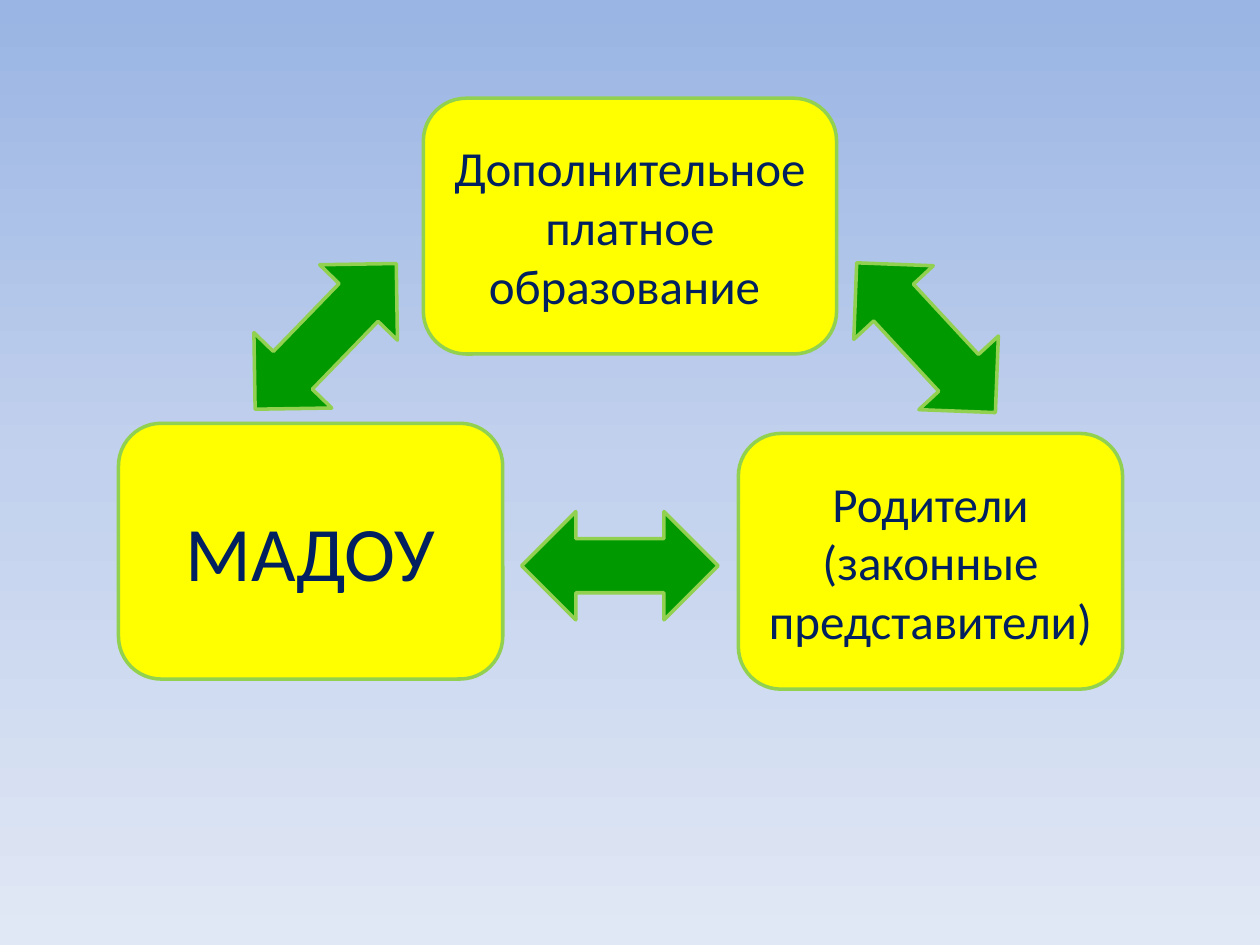
from copy import deepcopy

from pptx import Presentation
from pptx.dml.color import RGBColor
from pptx.enum.shapes import MSO_SHAPE as Kind
from pptx.enum.text import MSO_ANCHOR, PP_ALIGN
from pptx.oxml.ns import qn
from pptx.util import Inches, Pt

SKY = [(0, "9AB5E4"), (0.5, "C2D1ED"), (1, "E1E8F5")]
YELLOW, GREEN, LIME, NAVY = "FFFF00", "009900", "92D050", "002060"

# text, size, left, top, width
BOX_H = 2.03
BOXES = [
    ("Дополнительное платное образование ", 28, 3.36, 0.78, 3.28),
    ("Родители (законные представители)", 28, 5.86, 3.44, 3.05),
    ("МАДОУ", 44, 0.94, 3.36, 3.05),
]
# left, top, width, rotation
ARROW_H = 0.86
ARROWS = [
    (4.14, 4.06, 1.56, 0),
    (1.78, 2.24, 1.61, 314.1),
    (6.54, 2.25, 1.62, 47.2),
]


def rgb(code):
    return RGBColor.from_string(code)


def paint_sky(slide):
    """Fill the background from top to bottom with the SKY stops."""
    fill = slide.background.fill
    fill.gradient()
    fill.gradient_angle = 270
    stops = slide._element.find(".//" + qn("a:gsLst"))
    stops.append(deepcopy(stops[-1]))
    for stop, (place, code) in zip(fill.gradient_stops, SKY):
        stop.position = place
        stop.color.rgb = rgb(code)


def add_shape(slide, kind, color, *place):
    shape = slide.shapes.add_shape(kind, *map(Inches, place))
    shape.shadow.inherit = False
    shape.fill.solid()
    shape.fill.fore_color.rgb = rgb(color)
    shape.line.color.rgb = rgb(LIME)
    shape.line.width = Pt(2)
    return shape


def add_box(slide, text, size, left, top, width):
    box = add_shape(slide, Kind.ROUNDED_RECTANGLE, YELLOW, left, top, width, BOX_H)
    frame = box.text_frame
    frame.text = text
    frame.word_wrap = True
    frame.vertical_anchor = MSO_ANCHOR.MIDDLE
    para = frame.paragraphs[0]
    para.alignment = PP_ALIGN.CENTER
    font = para.runs[0].font
    font.name = "Calibri"
    font.size = Pt(size)
    font.color.rgb = rgb(NAVY)


def main():
    deck = Presentation()
    deck.slide_width, deck.slide_height = Inches(10), Inches(7.5)
    slide = deck.slides.add_slide(deck.slide_layouts[6])
    paint_sky(slide)
    for box in BOXES:
        add_box(slide, *box)
    for left, top, width, turn in ARROWS:
        arrow = add_shape(slide, Kind.LEFT_RIGHT_ARROW, GREEN, left, top, width, ARROW_H)
        arrow.rotation = turn
    deck.save("out.pptx")


if __name__ == "__main__":
    main()
